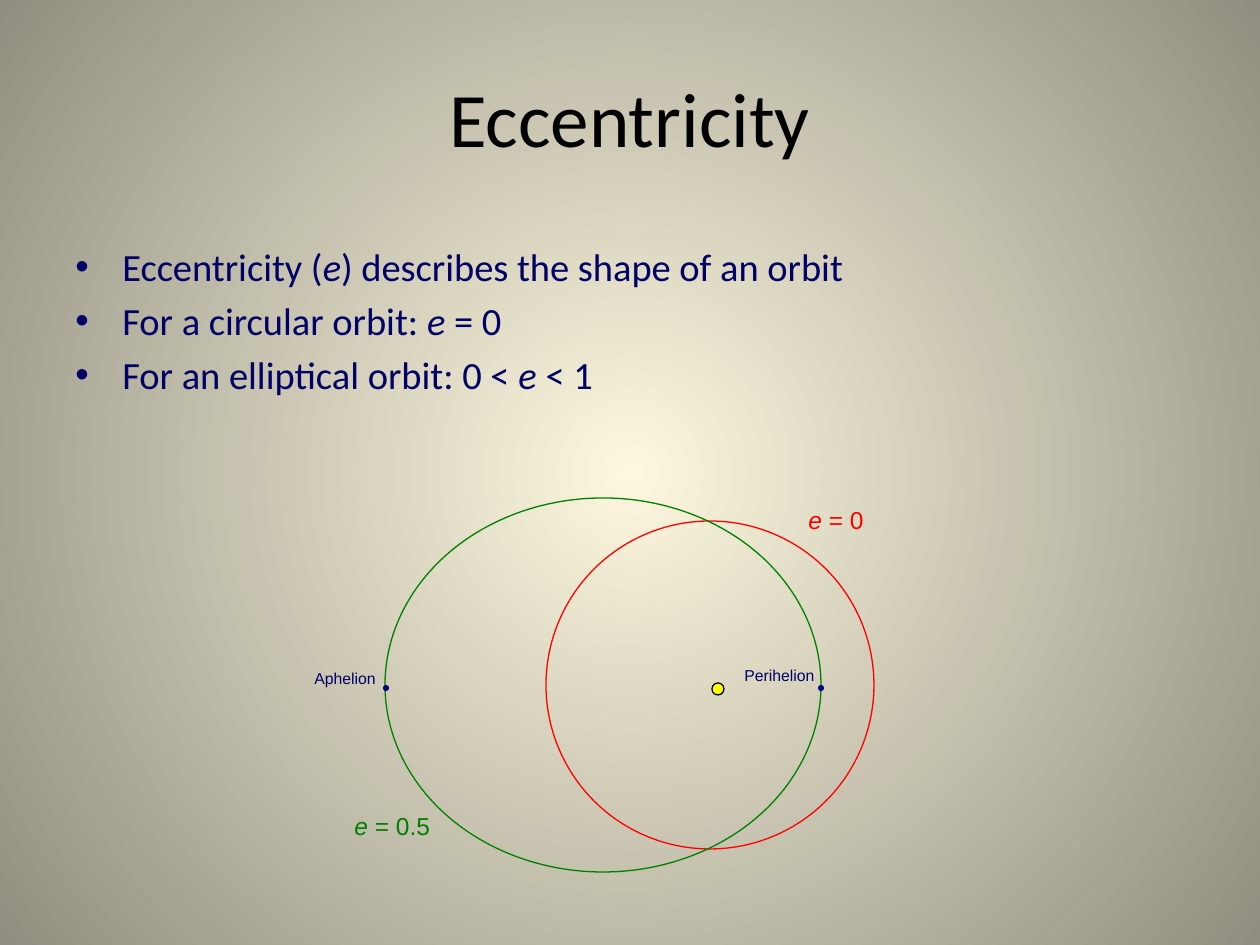
from dataclasses import dataclass

from lxml.etree import SubElement
from pptx import Presentation
from pptx.dml.color import RGBColor as RGB
from pptx.enum.shapes import MSO_SHAPE as Preset
from pptx.enum.text import MSO_ANCHOR as Anchor, MSO_AUTO_SIZE as AutoSize, PP_ALIGN as Align
from pptx.oxml import parse_xml
from pptx.oxml.ns import nsdecls, qn
from pptx.util import Emu, Pt

PX_PER_INCH = 126


def px(length):
    return Emu(round(length * 914400 / PX_PER_INCH))


@dataclass(frozen=True)
class Theme:
    center: str = "FCF7DD"
    edge: str = "918E81"
    title: str = "000000"
    text: str = "000066"
    circular: str = "FF0000"
    elliptical: str = "008000"
    sun: str = "FFFF00"
    sun_line: str = "000000"
    apsis: str = "000080"
    heading_font: str = "Calibri"
    label_font: str = "Arial"
    title_size: int = 44
    body_size: int = 22
    orbit_size: int = 14
    apsis_size: int = 9
    line_width: float = 0.75


class OrbitSlide:
    def __init__(self, slide, theme):
        self.slide = slide
        self.theme = theme

    def background(self):
        """Fill the background with a gradient radiating from the centre."""
        fill = self.slide.background.fill
        fill.gradient()
        old = self.slide.background._cSld.find(".//" + qn("a:gradFill"))
        radial = parse_xml(
            f'<a:gradFill {nsdecls("a")} rotWithShape="1"><a:gsLst>'
            f'<a:gs pos="0"><a:srgbClr val="{self.theme.center}"/></a:gs>'
            f'<a:gs pos="100000"><a:srgbClr val="{self.theme.edge}"/></a:gs></a:gsLst>'
            '<a:path path="circle"><a:fillToRect l="50000" t="50000" r="50000" b="50000"/></a:path>'
            '</a:gradFill>')
        old.getparent().replace(old, radial)

    def _frame(self, box):
        frame = self.slide.shapes.add_textbox(*map(px, box)).text_frame
        frame.word_wrap = True
        return frame

    def _write(self, paragraph, text, font, size, color):
        """Write text in which *asterisks* enclose the italic parts."""
        for index, part in enumerate(text.split("*")):
            if part:
                run = paragraph.add_run()
                run.text = part
                run.font.name = font
                run.font.size = Pt(size)
                run.font.italic = index % 2 == 1
                run.font.color.rgb = RGB.from_string(color)

    def _space_before(self, paragraph, percent):
        before = SubElement(paragraph._p.get_or_add_pPr(), qn("a:spcBef"))
        SubElement(before, qn("a:spcPct"), val=str(percent * 1000))

    def title(self, text, box):
        frame = self._frame(box)
        frame.vertical_anchor = Anchor.MIDDLE
        heading = frame.paragraphs[0]
        heading.alignment = Align.CENTER
        self._write(heading, text, self.theme.heading_font, self.theme.title_size, self.theme.title)

    def bullets(self, points, box, indent):
        frame = self._frame(box)
        for index, point in enumerate(points):
            paragraph = frame.add_paragraph() if index else frame.paragraphs[0]
            self._space_before(paragraph, 20)
            properties = paragraph._p.get_or_add_pPr()
            properties.set("marL", str(px(indent)))
            properties.set("indent", str(-px(indent)))
            SubElement(properties, qn("a:buFont"), typeface="Arial")
            SubElement(properties, qn("a:buChar"), char="•")
            self._write(paragraph, point, self.theme.heading_font, self.theme.body_size, self.theme.text)

    def label(self, text, box, size, color):
        frame = self._frame(box)
        frame.auto_size = AutoSize.SHAPE_TO_FIT_TEXT
        self._space_before(frame.paragraphs[0], 50)
        self._write(frame.paragraphs[0], text, self.theme.label_font, size, color)

    def ellipse(self, box, fill=None, line=None):
        oval = self.slide.shapes.add_shape(Preset.OVAL, *map(px, box))
        oval.shadow.inherit = False
        if fill:
            oval.fill.solid()
            oval.fill.fore_color.rgb = RGB.from_string(fill)
        else:
            oval.fill.background()
        if line:
            oval.line.color.rgb = RGB.from_string(line)
            oval.line.width = Pt(self.theme.line_width)
        else:
            oval.line.fill.background()


def main():
    deck = Presentation()
    deck.slide_width, deck.slide_height = px(1260), px(945)
    theme = Theme()
    page = OrbitSlide(deck.slides.add_slide(deck.slide_layouts[6]), theme)

    page.background()
    page.title("Eccentricity", (63, 38, 1134, 158))
    page.bullets(
        ["Eccentricity (*e*) describes the shape of an orbit",
         "For a circular orbit: *e* = 0",
         "For an elliptical orbit: 0 < *e *< 1"],
        (63, 237, 1134, 193), indent=47)

    page.label("*e* = 0", (796, 499, 87, 42), theme.orbit_size, theme.circular)
    page.label("*e* = 0.5", (342, 805, 107, 42), theme.orbit_size, theme.elliptical)
    page.ellipse((546, 521, 328, 328), line=theme.circular)
    page.ellipse((385, 498, 436, 374), line=theme.elliptical)
    page.ellipse((712, 683, 12, 12), fill=theme.sun, line=theme.sun_line)
    for apsis_left in (818, 383):
        page.ellipse((apsis_left, 685, 6, 6), fill=theme.apsis)
    page.label("Aphelion", (302, 663, 89, 31), theme.apsis_size, theme.text)
    page.label("Perihelion", (732, 660, 98, 31), theme.apsis_size, theme.text)

    deck.save("out.pptx")


if __name__ == "__main__":
    main()
